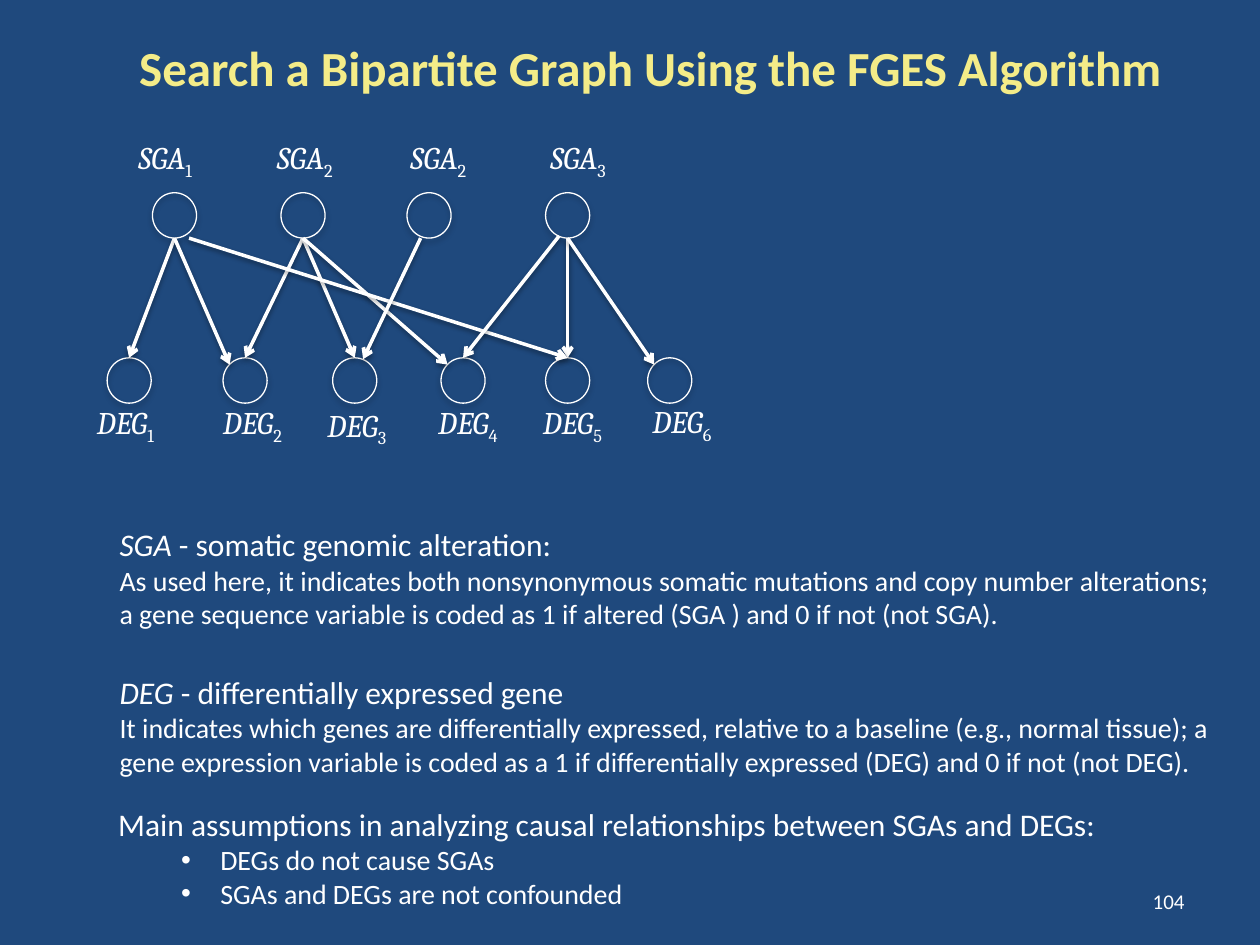
import pptx
import pptx.dml.color
import pptx.enum.shapes
import pptx.enum.text
import pptx.oxml.ns
import pptx.util
import lxml.etree

COLUMNS, ROWS = 100, 75
CELL = pptx.util.Inches(0.1)
COLORS = {"background": "1F497D", "white": "FFFFFF", "title": "F4EC88", "shadow": "000000"}
ALIGN = pptx.enum.text.PP_ALIGN
ANCHOR = pptx.enum.text.MSO_ANCHOR

NODE_WIDTH, NODE_HEIGHT = 3.5, 3.6
BOTTOM, TOP, UPPER_LEFT = (0.5, 1), (0.5, 0), (0.15, 0.15)
SGA_ROW, DEG_ROW = 4.8, 17.9
SGA_NODES = [
    (5.4, "1", 3.3, 0),
    (15.6, "2", 14.3, 0),
    (25.6, "2", 24.9, 0),
    (36.6, "3", 36, 0),
]
DEG_NODES = [
    (1.8, "1", 0, 21),
    (11, "2", 10, 21),
    (19.7, "3", 18.3, 21.2),
    (28.3, "4", 27.1, 21),
    (36.6, "5", 35.4, 21),
    (44.7, "6", 44.1, 20.9),
]
EDGES = [
    (0, 0, BOTTOM, TOP),
    (1, 1, BOTTOM, TOP),
    (3, 4, BOTTOM, TOP),
    (1, 2, BOTTOM, TOP),
    (1, 3, BOTTOM, UPPER_LEFT),
    (3, 5, BOTTOM, UPPER_LEFT),
    (0, 1, BOTTOM, UPPER_LEFT),
    (0, 4, (0.83, 1), TOP),
    (2, 2, (0.31, 1), (0.69, 0.03)),
    (3, 3, (0.31, 0.95), TOP),
]


def cells(*counts):
    return [round(count * CELL) for count in counts]


def color(name):
    return pptx.dml.color.RGBColor.from_string(COLORS[name])


def add_element(parent, tag, **attributes):
    element = lxml.etree.SubElement(parent, pptx.oxml.ns.qn(tag))
    for name, value in attributes.items():
        element.set(name, str(value))
    return element


def add_shadow(shape, distance, opacity):
    effects = add_element(shape._element.spPr, "a:effectLst")
    shadow = add_element(effects, "a:outerShdw", blurRad=pptx.util.Pt(3.1),
                         dist=pptx.util.Pt(distance), dir=90 * 60000, rotWithShape=0)
    shade = add_element(shadow, "a:srgbClr", val=COLORS["shadow"])
    add_element(shade, "a:alpha", val=opacity * 1000)


def add_text_box(slide, box, anchor=ANCHOR.TOP):
    frame = slide.shapes.add_textbox(*cells(*box)).text_frame
    frame.word_wrap = True
    frame.vertical_anchor = anchor
    return frame


def add_run(paragraph, text, size, font="Calibri", fill="white", bold=False, italic=False):
    run = paragraph.add_run()
    run.text = text
    run.font.size = pptx.util.Pt(size)
    run.font.name = font
    run.font.bold = bold
    run.font.italic = italic
    run.font.color.rgb = color(fill)
    return run


def add_title(slide, box):
    paragraph = add_text_box(slide, box).paragraphs[0]
    paragraph.alignment = ALIGN.CENTER
    add_run(paragraph, "Search a Bipartite Graph Using the FGES Algorithm", 28,
            fill="title", bold=True)


def add_node(slide, left, top):
    node = slide.shapes.add_shape(pptx.enum.shapes.MSO_SHAPE.OVAL,
                                  *cells(left, top, NODE_WIDTH, NODE_HEIGHT))
    node.fill.background()
    node.line.color.rgb = color("white")
    node.line.width = pptx.util.Pt(0.75)
    add_shadow(node, 1.8, 35)


def add_label(slide, left, top, name, index):
    paragraph = add_text_box(slide, (left, top, 8, 5.4)).paragraphs[0]
    add_run(paragraph, name, 18, font="Cambria", italic=True)
    subscript = add_run(paragraph, index, 18, font="Cambria")
    subscript.font._element.set("baseline", "-25000")


def add_arrow(slide, start, end):
    arrow = slide.shapes.add_connector(pptx.enum.shapes.MSO_CONNECTOR.STRAIGHT,
                                       *cells(*start, *end))
    arrow.line.color.rgb = color("white")
    arrow.line.width = pptx.util.Pt(2)
    add_element(arrow.line._get_or_add_ln(), "a:tailEnd", type="arrow")
    add_shadow(arrow, 1.6, 38)


def add_graph(slide, box):
    left, top = box[:2]

    def point(column, row, share):
        return left + column + share[0] * NODE_WIDTH, top + row + share[1] * NODE_HEIGHT

    for name, row, nodes in (("SGA", SGA_ROW, SGA_NODES), ("DEG", DEG_ROW, DEG_NODES)):
        for column, index, label_column, label_row in nodes:
            add_node(slide, left + column, top + row)
            add_label(slide, left + label_column, top + label_row, name, index)
    for source, target, leave, arrive in EDGES:
        add_arrow(slide, point(SGA_NODES[source][0], SGA_ROW, leave),
                  point(DEG_NODES[target][0], DEG_ROW, arrive))


def add_definition(slide, box, term, meaning, explanation):
    frame = add_text_box(slide, box)
    heading = frame.paragraphs[0]
    add_run(heading, term, 18, italic=True)
    add_run(heading, meaning, 18)
    add_run(frame.add_paragraph(), explanation, 16)


def add_assumptions(slide, box, heading, assumptions):
    frame = add_text_box(slide, box)
    add_run(frame.paragraphs[0], heading, 18)
    for assumption in assumptions:
        paragraph = frame.add_paragraph()
        paragraph.level = 1
        properties = paragraph._p.get_or_add_pPr()
        properties.set("marL", str(pptx.util.Inches(0.81)))
        properties.set("indent", str(pptx.util.Inches(-0.31)))
        add_element(properties, "a:buFont", typeface="Arial")
        add_element(properties, "a:buChar", char="•")
        add_run(paragraph, assumption, 16)


def add_page_number(slide, box):
    paragraph = add_text_box(slide, box, ANCHOR.MIDDLE).paragraphs[0]
    paragraph.alignment = ALIGN.RIGHT
    add_run(paragraph, "104", 12)


def main():
    presentation = pptx.Presentation()
    presentation.slide_width, presentation.slide_height = cells(COLUMNS, ROWS)
    slide = presentation.slides.add_slide(presentation.slide_layouts[6])
    slide.background.fill.solid()
    slide.background.fill.fore_color.rgb = color("background")

    add_title(slide, (9.8, 2.5, 83.6, 5.7))
    add_graph(slide, (6.7, 10.5, 51.6, 26.5))
    add_definition(
        slide, (8.5, 41.2, 89.2, 9.4), "SGA", " - somatic genomic alteration:",
        "As used here, it indicates both nonsynonymous somatic mutations and copy number "
        "alterations; a gene sequence variable is coded as 1 if altered (SGA ) and 0 if not "
        "(not SGA).")
    add_definition(
        slide, (8.5, 52.9, 89.2, 9.4), "DEG", " - differentially expressed gene",
        "It indicates which genes are differentially expressed, relative to a baseline (e.g., "
        "normal tissue); a gene expression variable is coded as a 1 if differentially "
        "expressed (DEG) and 0 if not (not DEG).")
    add_assumptions(
        slide, (8.4, 63.4, 86.6, 9.4),
        "Main assumptions in analyzing causal relationships between SGAs and DEGs:",
        ["DEGs do not cause SGAs", "SGAs and DEGs are not confounded"])
    add_page_number(slide, (71.7, 69.5, 23.3, 4))
    presentation.save("out.pptx")


if __name__ == "__main__":
    main()
